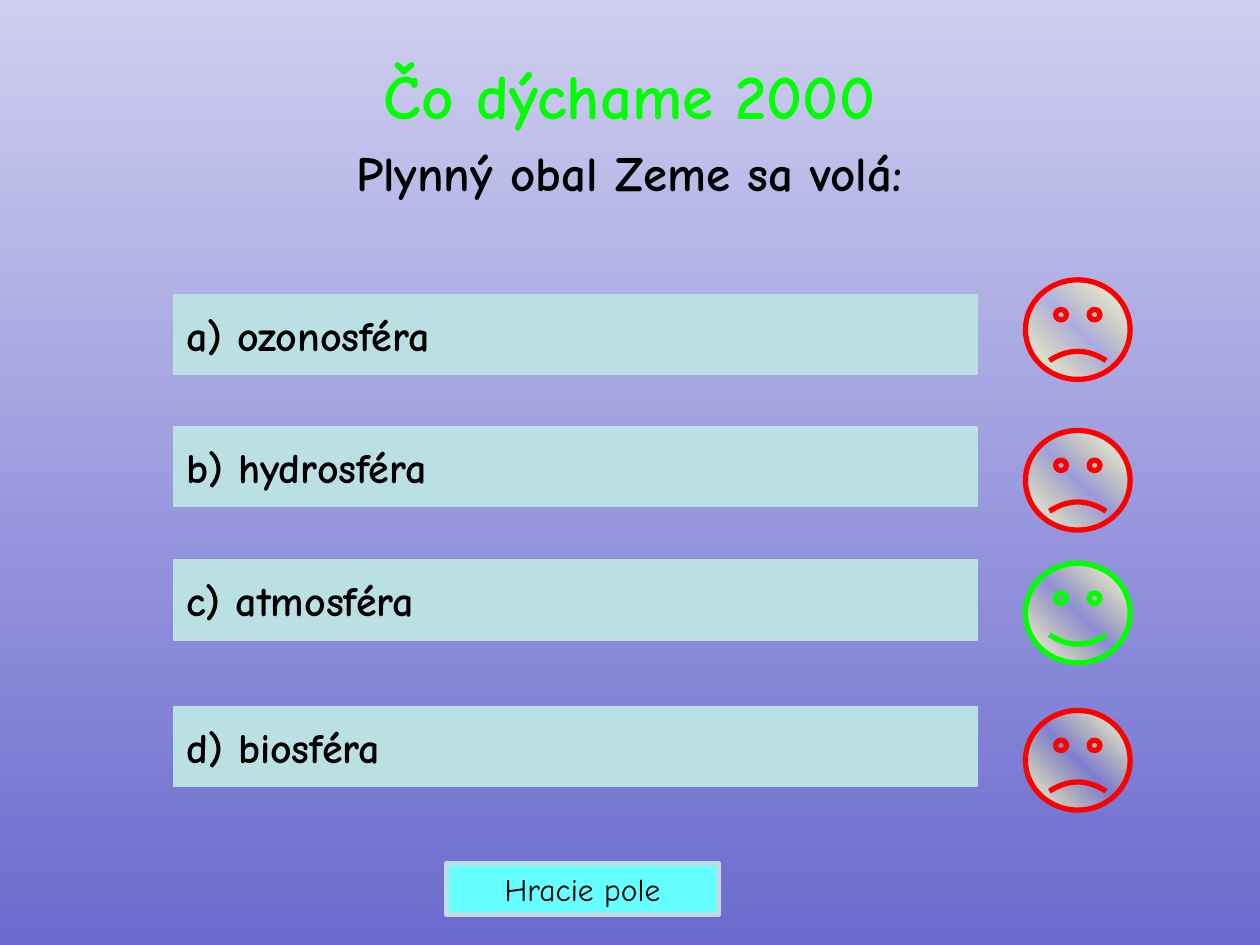
from pptx import Presentation
from pptx.dml.color import RGBColor
from pptx.enum.shapes import MSO_SHAPE
from pptx.enum.text import MSO_ANCHOR, MSO_AUTO_SIZE, PP_ALIGN
from pptx.oxml import parse_xml
from pptx.oxml.ns import nsdecls, qn
from pptx.util import Pt

COLORS = {
    "sky": "CECEEF", "dusk": "6B6BCF", "black": "000000", "white": "FFFFFF",
    "green": "00FF00", "red": "FF0000", "yellow": "FFFF66",
    "answer": "BBE0E3", "button": "66FFFF",
}
FONT = "Comic Neue"
ANSWER_LEFT, ANSWER_WIDTH, ANSWER_HEIGHT = 99.3, 459, 45.4
FACE_LEFT, FACE_WIDTH, FACE_HEIGHT = 586, 59.8, 56.9
# Text, top of the answer bar, top of the face, whether it is right
ANSWERS = [
    ("a) ozonosféra", 168.5, 159.9, False),
    ("b) hydrosféra", 244.1, 246, False),
    ("c) atmosféra", 320.2, 321.9, True),
    ("d) biosféra", 404, 406, False),
]


def color(name):
    return RGBColor.from_string(COLORS[name])


def format_paragraph(para, size, color_name, bold, align):
    para.alignment = align
    for run in para.runs:
        run.font.name = FONT
        run.font.size = Pt(size)
        run.font.bold = bold
        run.font.color.rgb = color(color_name)


def set_gradient(fill, start, end, angle):
    fill.gradient()
    fill.gradient_angle = angle
    for stop, name in zip(fill.gradient_stops, (start, end)):
        stop.color.rgb = color(name)


def add_heading(page, box):
    title = page.shapes.title
    title.left, title.top, title.width, title.height = map(Pt, box)
    frame = title.text_frame
    frame.text = "Čo dýchame 2000\nPlynný obal Zeme sa volá:"
    frame.word_wrap = True
    frame.auto_size = MSO_AUTO_SIZE.NONE
    frame.vertical_anchor = MSO_ANCHOR.TOP
    for para, size, name in zip(frame.paragraphs, (36, 28), ("green", "black")):
        format_paragraph(para, size, name, True, PP_ALIGN.CENTER)
        para.space_before = Pt(size * 0.2)


def add_shape(page, kind, box, line_name, line_width):
    shape = page.shapes.add_shape(kind, *map(Pt, box))
    shape.shadow.inherit = False
    shape.line.color.rgb = color(line_name)
    shape.line.width = Pt(line_width)
    return shape


def add_button(page, box, text, fill_name, line_width, size, bold, align):
    button = add_shape(page, MSO_SHAPE.ACTION_BUTTON_CUSTOM, box, "answer", line_width)
    button.fill.solid()
    button.fill.fore_color.rgb = color(fill_name)
    frame = button.text_frame
    frame.text = text
    frame.word_wrap = False
    frame.vertical_anchor = MSO_ANCHOR.MIDDLE
    format_paragraph(frame.paragraphs[0], size, "black", bold, align)


def add_face(page, box, right):
    face = add_shape(page, MSO_SHAPE.SMILEY_FACE, box, "green" if right else "red", 3)
    face.adjustments[0] = 0.047 if right else -0.047
    set_gradient(face.fill, "white", "white", 45)
    # Fully transparent middle stop
    stops = face.element.spPr.find(f".//{qn('a:gsLst')}")
    stops.insert(1, parse_xml(
        f'<a:gs {nsdecls("a")} pos="50000"><a:srgbClr val="{COLORS["yellow"]}">'
        '<a:alpha val="0"/></a:srgbClr></a:gs>'))


def add_answers(page):
    for text, answer_top, face_top, right in ANSWERS:
        add_button(page, (ANSWER_LEFT, answer_top, ANSWER_WIDTH, ANSWER_HEIGHT),
                   text, "answer", 1, 24, True, PP_ALIGN.LEFT)
        add_face(page, (FACE_LEFT, face_top, FACE_WIDTH, FACE_HEIGHT), right)


def main():
    deck = Presentation()
    deck.slide_width, deck.slide_height = Pt(720), Pt(540)
    page = deck.slides.add_slide(deck.slide_layouts[5])
    set_gradient(page.background.fill, "sky", "dusk", 270)

    # Heading and question
    add_heading(page, (28.1, 28.8, 663.1, 54))
    # Answers with their faces
    add_answers(page)
    # Button back to the board
    add_button(page, (255, 493.4, 155.7, 29), "Hracie pole",
               "button", 3, 18, False, PP_ALIGN.CENTER)

    deck.save("out.pptx")


if __name__ == "__main__":
    main()
